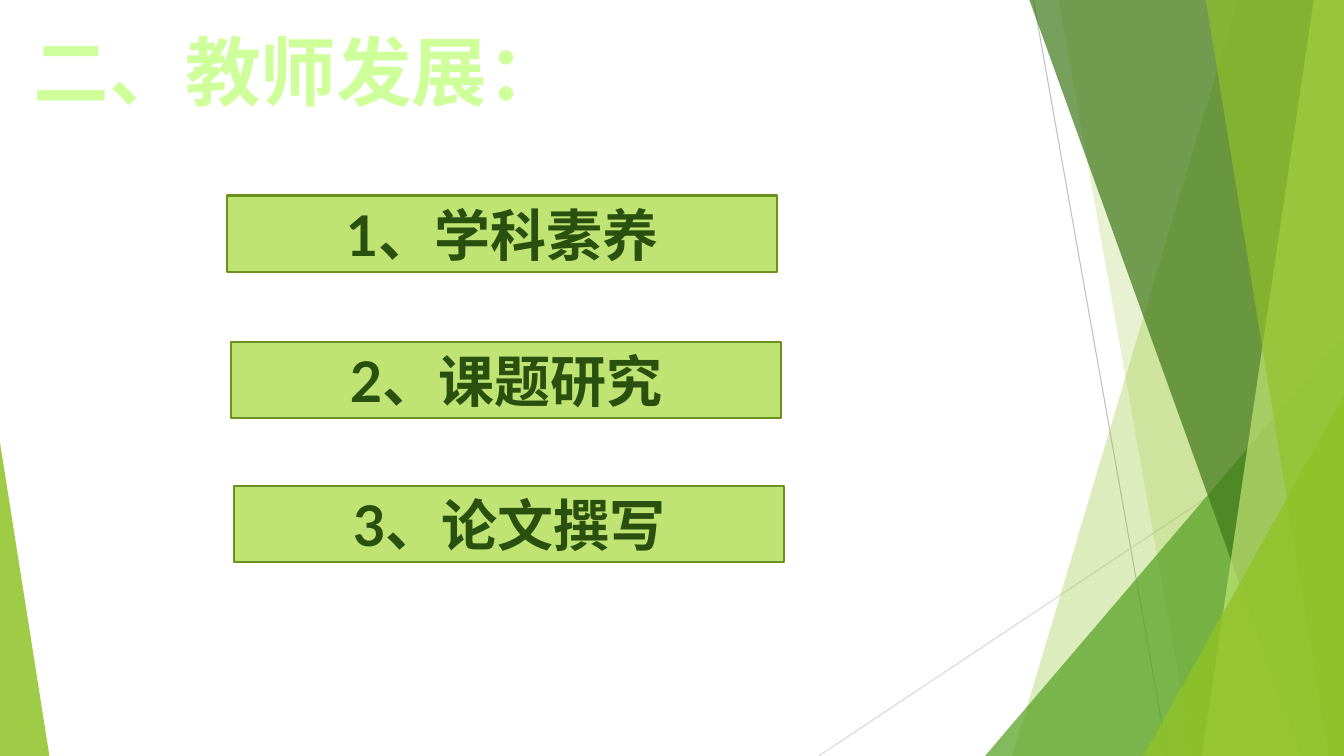
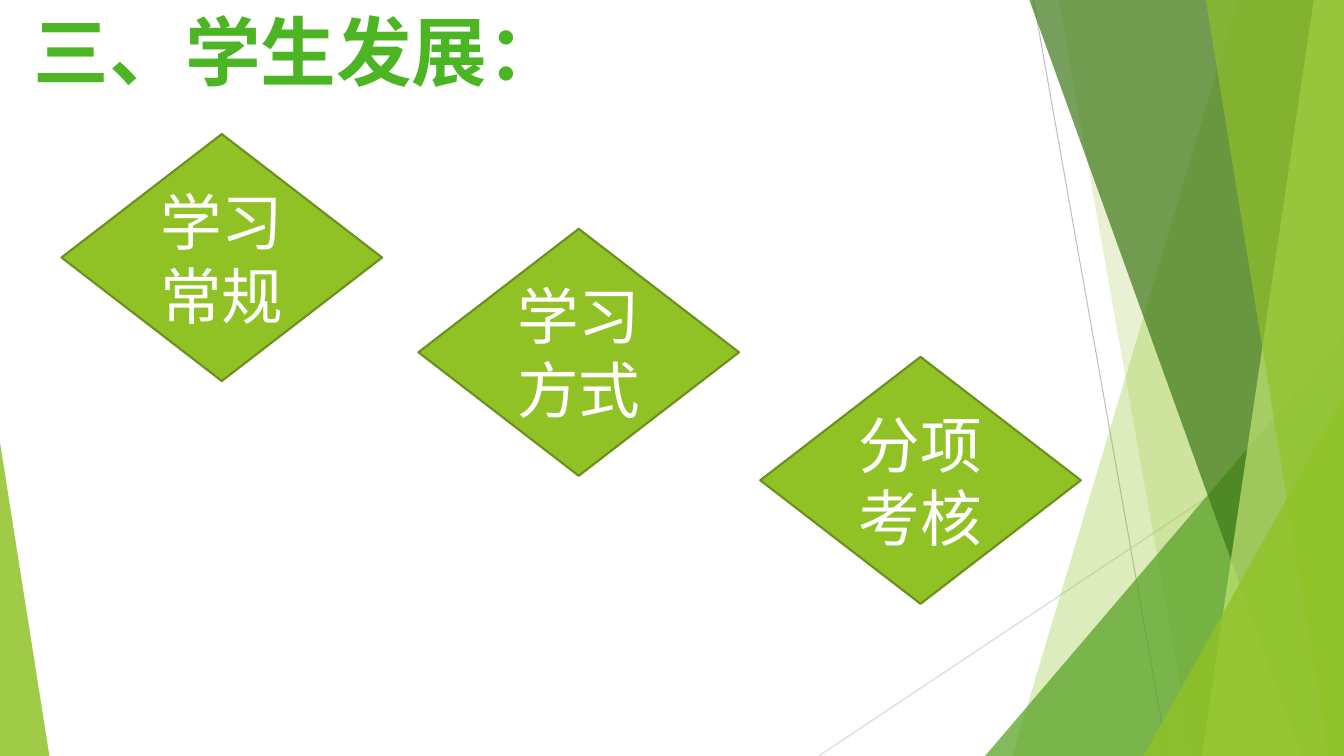
from lxml.etree import SubElement
from pptx import Presentation
from pptx.dml.color import RGBColor
from pptx.enum.shapes import MSO_CONNECTOR, MSO_SHAPE
from pptx.enum.text import MSO_ANCHOR, MSO_AUTO_SIZE, PP_ALIGN
from pptx.oxml.ns import qn
from pptx.util import Inches, Pt

FONT = "Lato"
LIME = RGBColor(0x90, 0xC2, 0x26)
PALE = RGBColor(0xC0, 0xE4, 0x74)
LEAF = RGBColor(0x54, 0xA0, 0x21)
MOSS = RGBColor(0x3F, 0x78, 0x19)
EDGE = RGBColor(0x6B, 0x90, 0x1C)
DARK = RGBColor(0x2A, 0x50, 0x10)
MINT = RGBColor(0xCF, 0xFF, 0x9B)
GRASS = RGBColor(0x4C, 0xB5, 0x23)
WHITE = RGBColor(0xFF, 0xFF, 0xFF)
GREY = RGBColor(0xBF, 0xBF, 0xBF)
SILVER = RGBColor(0xD9, 0xD9, 0xD9)
WIDE, HIGH = 13.33, 7.5

deck = Presentation()
deck.slide_width, deck.slide_height = Inches(WIDE), Inches(HIGH)
layout = deck.slide_layouts[5]
for holder in list(layout.placeholders)[1:]:
    holder.element.getparent().remove(holder.element)


def write(frame, text, size, color, bold):
    """Put one centred line of formatted text in a frame."""
    frame.word_wrap = True
    para = frame.paragraphs[0]
    para.alignment = PP_ALIGN.CENTER
    run = para.add_run()
    run.text = text
    font = run.font
    font.name, font.size, font.bold = FONT, Pt(size), bold
    font.color.rgb = color


# Backdrop: thin lines, then overlapping translucent facets (alpha in percent)
LINES = [((10.25, 0), (11.58, HIGH), GREY), ((WIDE, 4.03), (8.12, HIGH), SILVER)]
FACETS = [
    ("band", 12.28, 10.04, LIME, 30),
    ("band", 10.5, 11.83, LIME, 20),
    ("wedge", (9.77, 3.33, 3.56, 4.17), 1, LEAF, 72),
    ("band", 10.21, 12.91, MOSS, 70),
    ("band", 13.03, 11.92, PALE, 70),
    ("band", 11.96, 13.18, LIME, 65),
    ("wedge", (11.34, 3.93, 1.99, 3.57), 1, LIME, 80),
    ("wedge", (0, 4.39, 0.49, 3.11), 0, LIME, 85),
]

# The layout cannot draw shapes itself, so they are drawn on a slide and moved.
first = deck.slides.add_slide(layout)
decor = []
for start, end, color in LINES:
    line = first.shapes.add_connector(
        MSO_CONNECTOR.STRAIGHT, *(Inches(v) for v in start + end))
    line.line.color.rgb = color
    line.line.width = Pt(0.75)
    SubElement(line.element.spPr, qn("a:effectLst"))
    decor.append(line)

for kind, place, low, color, alpha in FACETS:
    if kind == "band":
        # place and low: where the left edge meets the slide's top and bottom
        pen = first.shapes.build_freeform(Inches(place), 0)
        pen.add_line_segments([(Inches(x), Inches(y)) for x, y in
                               ((WIDE, 0), (WIDE, HIGH), (low, HIGH))])
        facet = pen.convert_to_shape()
    else:
        facet = first.shapes.add_shape(
            MSO_SHAPE.ISOSCELES_TRIANGLE, *(Inches(v) for v in place))
        facet.adjustments[0] = low
    facet.shadow.inherit = False
    facet.line.fill.background()
    facet.fill.solid()
    facet.fill.fore_color.rgb = color
    tint = facet.element.xpath("./p:spPr/a:solidFill/a:srgbClr")[0]
    SubElement(tint, qn("a:alpha"), val=str(alpha * 1000))
    decor.append(facet)

for shape in decor:
    layout.shapes.element.append(shape.element)

# Each slide: title, its top and colour; box shape, size, fill, text style; boxes
PAGES = [
    (first, "二、教师发展：", 0.2, MINT,
     MSO_SHAPE.RECTANGLE, (5.46, 0.76), PALE, (40, DARK, True),
     [("1、学科素养", 2.25, 1.94), ("2、课题研究", 2.29, 3.39),
      ("3、论文撰写", 2.32, 4.82)]),
    (deck.slides.add_slide(layout), "三、学生发展：", 0, GRASS,
     MSO_SHAPE.FLOWCHART_DECISION, (3.18, 2.45), LIME, (44, WHITE, False),
     [("学习常规", 0.61, 1.33), ("学习方式", 4.15, 2.27),
      ("分项考核", 7.54, 3.54)]),
]

for slide, head, top, hue, form, size, fill, style, boxes in PAGES:
    title = slide.shapes.title
    title.left, title.top = Inches(0.19), Inches(top)
    title.width, title.height = Inches(4.79), Inches(1.01)
    title.text_frame.auto_size = MSO_AUTO_SIZE.NONE
    title.text_frame.vertical_anchor = MSO_ANCHOR.TOP
    write(title.text_frame, head, 54, hue, True)

    for text, left, y in boxes:
        box = slide.shapes.add_shape(
            form, *(Inches(v) for v in (left, y) + size))
        box.shadow.inherit = False
        box.fill.solid()
        box.fill.fore_color.rgb = fill
        box.line.color.rgb = EDGE
        box.line.width = Pt(1.5)
        box.text_frame.vertical_anchor = MSO_ANCHOR.MIDDLE
        write(box.text_frame, text, *style)

deck.save("out.pptx")
